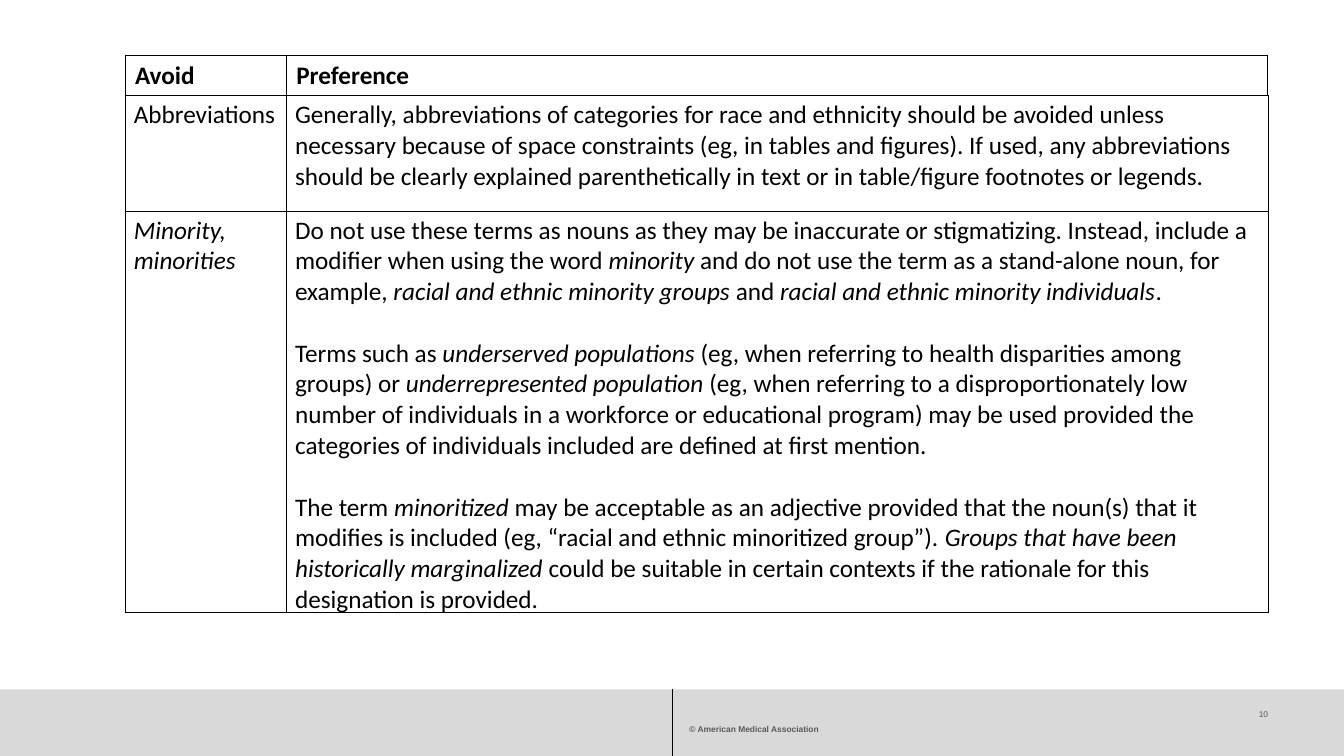
"""Build the slide on preferred terms for abbreviations and minorities."""
import pptx
import pptx.util
import pptx.dml.color
import pptx.enum.shapes
import pptx.enum.text
import pptx.oxml
import pptx.oxml.ns

Pt = pptx.util.Pt
ALIGN = pptx.enum.text.PP_ALIGN

HEADER = [[["Avoid"], ["Preference"]]]
TERMS = [
    [["Abbreviations"],
     ["Generally, abbreviations of categories for race and ethnicity should be avoided unless "
      "necessary because of space constraints (eg, in tables and figures). If used, any "
      "abbreviations should be clearly explained parenthetically in text or in table/figure "
      "footnotes or legends."]],
    [["*Minority, minorities*"],
     ["Do not use these terms as nouns as they may be inaccurate or stigmatizing. Instead, "
      "include a modifier when using the word *minority* and do not use the term as a "
      "stand-alone noun, for example, *racial and ethnic minority groups* and *racial and "
      "ethnic minority individuals*.",
      "Terms such as *underserved populations* (eg, when referring to health disparities among "
      "groups) or *underrepresented population* (eg, when referring to a disproportionately low "
      "number of individuals in a workforce or educational program) may be used provided the "
      "categories of individuals included are defined at first mention.",
      "The term *minoritized* may be acceptable as an adjective provided that the noun(s) that "
      "it modifies is included (eg, “racial and ethnic minoritized group”). *Groups that have "
      "been historically marginalized* could be suitable in certain contexts if the rationale "
      "for this designation is provided."]],
]
TABLES = [
    dict(rows=HEADER, top=39.6, widths=[115.2, 700.5], heights=[28.8],
         bold=True, insets=(7.2, 3.6, 7.2, 3.6)),
    dict(rows=TERMS, top=68.4, widths=[115.2, 701.5], heights=[82.3, 286.6],
         bold=False, insets=(6.3, 3, 6.3, 0)),
]
FOOTER = [
    ("© American Medical Association", (492.5, 517, 324, 7.2), ALIGN.LEFT, True),
    ("10", (851.8, 506.2, 54, 28.8), ALIGN.RIGHT, False),
]
SLIDE_W, SLIDE_H = 960, 540
TABLE_LEFT, BAND_TOP = 89.3, 492.5
PARAGRAPH_GAP = 22
BODY = dict(name="Calibri", size=Pt(18))
SMALL = dict(name="Arial", size=Pt(6))


def rgb(value):
    return pptx.dml.color.RGBColor.from_string(value)


def set_attrs(obj, values):
    for name, value in values.items():
        setattr(obj, name, value)


def set_insets(obj, insets):
    sides = ("margin_left", "margin_top", "margin_right", "margin_bottom")
    set_attrs(obj, dict(zip(sides, map(Pt, insets))))


def add_runs(p, text, font, color):
    for i, part in enumerate(text.split("*")):
        if part:
            r = p.add_run()
            r.text = part
            set_attrs(r.font, dict(font, italic=i % 2 == 1))
            r.font.color.rgb = rgb(color)


def add_borders(cell, color="000000", width=0.75):
    tcPr = cell._tc.get_or_add_tcPr()
    for side in ("lnL", "lnR", "lnT", "lnB"):
        tcPr.append(pptx.oxml.parse_xml(
            f'<a:{side} {pptx.oxml.ns.nsdecls("a")} w="{Pt(width)}"><a:solidFill>'
            f'<a:srgbClr val="{color}"/></a:solidFill></a:{side}>'))


def fill_cell(cell, paragraphs, bold, insets):
    set_insets(cell, insets)
    add_borders(cell)
    cell.fill.background()
    tf = cell.text_frame
    for i, text in enumerate(paragraphs):
        p = tf.add_paragraph() if i else tf.paragraphs[0]
        if i:
            p.space_before = Pt(PARAGRAPH_GAP)
        add_runs(p, text, dict(BODY, bold=bold), "000000")


def add_term_table(s, rows, top, widths, heights, bold, insets):
    table = s.shapes.add_table(len(rows), len(widths), Pt(TABLE_LEFT), Pt(top),
                               Pt(sum(widths)), Pt(sum(heights))).table
    set_attrs(table, dict(first_row=False, horz_banding=False))
    for column, width in zip(table.columns, widths):
        column.width = Pt(width)
    for row, height, contents in zip(table.rows, heights, rows):
        row.height = Pt(height)
        for cell, paragraphs in zip(row.cells, contents):
            fill_cell(cell, paragraphs, bold, insets)


def add_band(s):
    sp = s.shapes.add_shape(pptx.enum.shapes.MSO_SHAPE.RECTANGLE, 0, Pt(BAND_TOP),
                            Pt(SLIDE_W), Pt(SLIDE_H - BAND_TOP))
    sp.shadow.inherit = False
    sp.fill.solid()
    sp.fill.fore_color.rgb = rgb("D9D9D9")
    sp.line.fill.background()
    divider = s.shapes.add_connector(pptx.enum.shapes.MSO_CONNECTOR.STRAIGHT, 0, 0, 0, 0)
    divider.begin_connect(sp, 0)
    divider.end_connect(sp, 2)
    divider.line.color.rgb = rgb("000000")
    divider.line.width = Pt(0.25)
    divider._element.spPr.append(pptx.oxml.parse_xml(
        f'<a:effectLst {pptx.oxml.ns.nsdecls("a")}/>'))


def add_footer_text(s, text, box, align, bold):
    tf = s.shapes.add_textbox(*map(Pt, box)).text_frame
    tf.word_wrap = True
    set_insets(tf, (0, 0, 0, 0))
    p = tf.paragraphs[0]
    p.alignment = align
    add_runs(p, text, dict(SMALL, bold=bold), "595959")


def main():
    prs = pptx.Presentation()
    set_attrs(prs, dict(slide_width=Pt(SLIDE_W), slide_height=Pt(SLIDE_H)))
    s = prs.slides.add_slide(prs.slide_layouts[6])
    add_band(s)
    for item in FOOTER:
        add_footer_text(s, *item)
    for table in TABLES:
        add_term_table(s, **table)
    prs.save("out.pptx")


if __name__ == "__main__":
    main()
